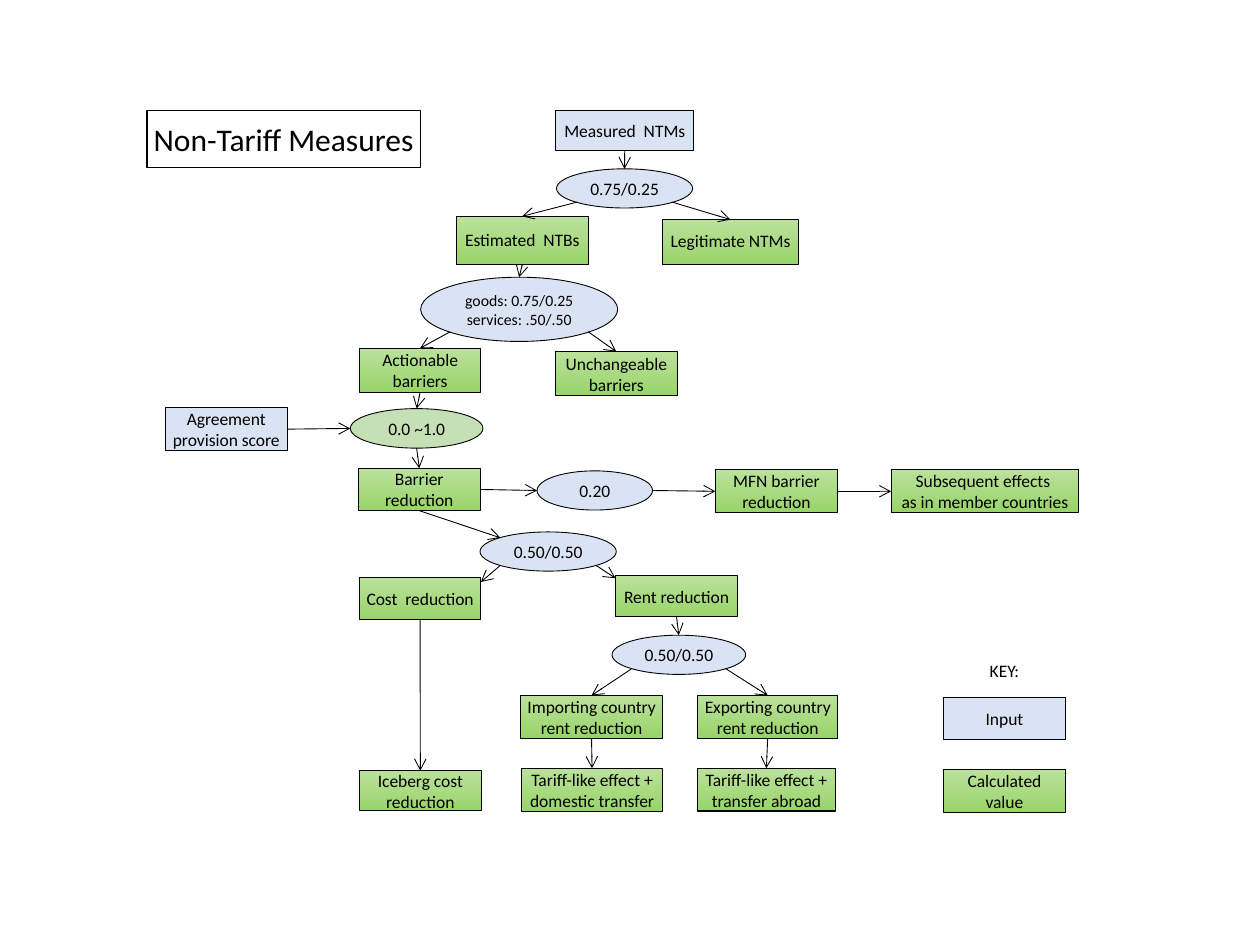
from lxml import etree
from pptx import Presentation
from pptx.dml.color import RGBColor
from pptx.enum import shapes, text
from pptx.oxml import ns
from pptx.util import Pt

BLACK = RGBColor(0x00, 0x00, 0x00)
INPUT_BLUE = RGBColor(0xDA, 0xE3, 0xF3)
SCORE_GREEN = RGBColor(0xC5, 0xE0, 0xB4)
CALC_LIGHT = RGBColor(0xBB, 0xE1, 0x9B)
CALC_DARK = RGBColor(0x98, 0xD4, 0x69)
CALCULATED = (CALC_LIGHT, CALC_DARK)

TOP, LEFT, BOTTOM, RIGHT = (0.5, 0), (0, 0.5), (0.5, 1), (1, 0.5)
UPPER_LEFT, LOWER_LEFT, LOWER_RIGHT = (0.15, 0.15), (0.15, 0.85), (0.85, 0.85)
COST_CORNER, RENT_CORNER = (1, 0.1), (0, 0.06)
SIDES = [TOP, LEFT, BOTTOM, RIGHT]

INPUTS = {
    "measured": ("Measured  NTMs", 317.5, 63.2, 79, 22.6),
    "agreement": ("Agreement provision score", 94.4, 233, 69.8, 24.5),
    "key input": ("Input", 539.1, 398.4, 69.8, 24.4),
}
RESULTS = {
    "estimated": ("Estimated  NTBs", 260.6, 123.6, 75.6, 27.8),
    "legitimate": ("Legitimate NTMs", 378.5, 125.5, 77.9, 25.9),
    "actionable": ("Actionable barriers", 205.3, 199, 69.5, 25.3),
    "unchangeable": ("Unchangeable barriers", 317.3, 200.9, 69.7, 25.1),
    "reduction": ("Barrier reduction", 204.7, 267.6, 69.8, 24.2),
    "mfn": ("MFN barrier reduction", 408.8, 268.5, 69.8, 24.5),
    "subsequent": ("Subsequent effects \vas in member countries", 509.2, 268.5, 107.2, 24.5),
    "cost": ("Cost  reduction", 205.3, 330.2, 69.5, 23.8),
    "rent": ("Rent reduction", 351.7, 329, 69.8, 23.5),
    "importing": ("Importing country rent reduction", 297.4, 397.4, 81.3, 24.5),
    "exporting": ("Exporting country rent reduction", 398.6, 397.4, 80.2, 24.5),
    "domestic": ("Tariff-like effect +\ndomestic transfer", 298, 439, 80.6, 24.8),
    "abroad": ("Tariff-like effect +\ntransfer abroad", 398.6, 439, 78.7, 24.5),
    "iceberg": ("Iceberg cost reduction", 205.3, 440.4, 69.8, 23),
    "key result": ("Calculated value", 539.1, 439.9, 69.8, 24.4),
}
SHARES = {
    "measured share": ("0.75/0.25", 318, 96.5, 77.8, 22.4, INPUT_BLUE, 10),
    "barrier share": ("goods: 0.75/0.25 services: .50/.50", 240.4, 158.4, 112.6, 36.7, INPUT_BLUE, 9),
    "score": ("0.0 ~1.0", 200.2, 233.5, 75.8, 22.6, SCORE_GREEN, 10),
    "mfn share": ("0.20", 306.9, 269.1, 66, 22.4, INPUT_BLUE, 10),
    "reduction share": ("0.50/0.50", 274.3, 304, 77.9, 22.4, INPUT_BLUE, 10),
    "rent share": ("0.50/0.50", 349.7, 363, 76.4, 22.4, INPUT_BLUE, 10),
}
FLOWS = [
    ("measured", BOTTOM, "measured share", TOP),
    ("measured share", LOWER_LEFT, "estimated", TOP),
    ("measured share", LOWER_RIGHT, "legitimate", TOP),
    ("estimated", BOTTOM, "barrier share", TOP),
    ("barrier share", LOWER_LEFT, "actionable", TOP),
    ("barrier share", LOWER_RIGHT, "unchangeable", TOP),
    ("actionable", BOTTOM, "score", TOP),
    ("agreement", RIGHT, "score", LEFT),
    ("score", BOTTOM, "reduction", TOP),
    ("reduction", RIGHT, "mfn share", LEFT),
    ("mfn share", RIGHT, "mfn", LEFT),
    ("mfn", RIGHT, "subsequent", LEFT),
    ("reduction", BOTTOM, "reduction share", UPPER_LEFT),
    ("reduction share", LOWER_LEFT, "cost", COST_CORNER),
    ("reduction share", LOWER_RIGHT, "rent", RENT_CORNER),
    ("cost", BOTTOM, "iceberg", TOP),
    ("rent", BOTTOM, "rent share", TOP),
    ("rent share", LOWER_LEFT, "importing", TOP),
    ("rent share", LOWER_RIGHT, "exporting", TOP),
    ("importing", BOTTOM, "domestic", TOP),
    ("exporting", BOTTOM, "abroad", TOP),
]


def write(holder, words, size=10):
    """Put centred black text in a shape."""
    frame = holder.text_frame
    frame.text = words
    frame.word_wrap = True
    frame.auto_size = text.MSO_AUTO_SIZE.NONE
    frame.vertical_anchor = text.MSO_ANCHOR.MIDDLE
    for paragraph in frame.paragraphs:
        paragraph.alignment = text.PP_ALIGN.CENTER
        for run in paragraph.runs:
            run.font.name = "Calibri"
            run.font.size = Pt(size)
            run.font.color.rgb = BLACK


def tighten(holder):
    """Give a rectangle its narrow text margins."""
    frame = holder.text_frame
    frame.margin_left = frame.margin_right = Pt(2.9)
    frame.margin_top = frame.margin_bottom = Pt(1.4)


def outline(holder, width):
    """Draw a thin black border."""
    holder.line.color.rgb = BLACK
    holder.line.width = Pt(width)


def add_box(slide, words, x, y, w, h, colour):
    """Add a rectangle, with a gradient when the colour is a pair."""
    box = slide.shapes.add_shape(shapes.MSO_SHAPE.RECTANGLE, Pt(x), Pt(y), Pt(w), Pt(h))
    box.shadow.inherit = False
    if colour is CALCULATED:
        box.fill.gradient()
        box.fill.gradient_angle = 270
        for stop, shade in zip(box.fill.gradient_stops, colour):
            stop.color.rgb = shade
    else:
        box.fill.solid()
        box.fill.fore_color.rgb = colour
    outline(box, 0.6)
    write(box, words)
    tighten(box)
    return box


def add_share(slide, words, x, y, w, h, colour, size):
    """Add an ellipse holding a split or a score."""
    share = slide.shapes.add_shape(shapes.MSO_SHAPE.OVAL, Pt(x), Pt(y), Pt(w), Pt(h))
    share.shadow.inherit = False
    share.fill.solid()
    share.fill.fore_color.rgb = colour
    outline(share, 0.5)
    write(share, words, size)
    return share


def port(node, site):
    """Return the point at the given fractions of a node's frame."""
    return int(node.left + site[0] * node.width), int(node.top + site[1] * node.height)


def add_flow(slide, source, start, target, end):
    """Add an arrow, joined to rectangles at the middle of their sides."""
    flow = slide.shapes.add_connector(
        shapes.MSO_CONNECTOR.STRAIGHT, *port(source, start), *port(target, end))
    outline(flow, 0.5)
    for node, site, join in ((source, start, flow.begin_connect), (target, end, flow.end_connect)):
        if node.auto_shape_type == shapes.MSO_SHAPE.RECTANGLE and site in SIDES:
            join(node, SIDES.index(site))
    etree.SubElement(flow.line._get_or_add_ln(), ns.qn("a:tailEnd"), type="arrow")
    etree.SubElement(flow._element.spPr, ns.qn("a:effectLst"))


def add_title(slide):
    """Place the framed title."""
    title = slide.shapes.title
    title.left, title.top, title.width, title.height = Pt(84), Pt(63.2), Pt(156.2), Pt(32.4)
    outline(title, 0.6)
    write(title, "Non-Tariff Measures", 18)
    tighten(title)


def add_key_label(slide):
    """Add the heading above the colour key."""
    label = slide.shapes.add_textbox(Pt(539.1), Pt(371), Pt(69.8), Pt(24.4))
    write(label, "KEY:")
    tighten(label)


def main():
    """Build the slide and save it."""
    deck = Presentation()
    deck.slide_width, deck.slide_height = Pt(720), Pt(540)
    slide = deck.slides.add_slide(deck.slide_layouts[5])
    add_title(slide)
    nodes = {}
    for boxes, colour in ((INPUTS, INPUT_BLUE), (RESULTS, CALCULATED)):
        for name, box in boxes.items():
            nodes[name] = add_box(slide, *box, colour)
    for name in ("estimated", "legitimate"):
        nodes[name].text_frame.paragraphs[0].line_spacing = 0.9
    for name, share in SHARES.items():
        nodes[name] = add_share(slide, *share)
    for source, start, target, end in FLOWS:
        add_flow(slide, nodes[source], start, nodes[target], end)
    add_key_label(slide)
    deck.save("out.pptx")


if __name__ == "__main__":
    main()
